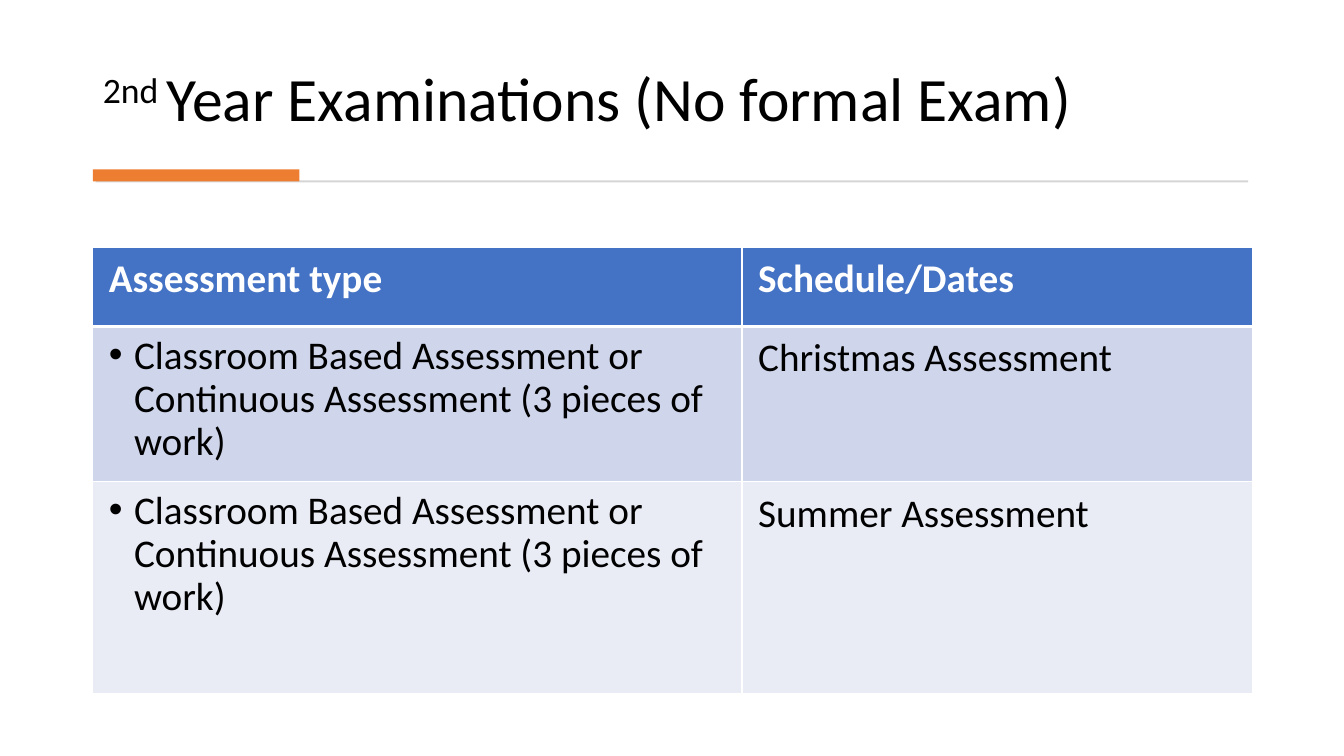
from dataclasses import dataclass

from lxml.etree import SubElement
from pptx import Presentation
from pptx.dml.color import RGBColor as Rgb
from pptx.enum.shapes import MSO_SHAPE as Shape
from pptx.enum.text import MSO_ANCHOR as Anchor, MSO_AUTO_SIZE as Fit, PP_ALIGN as Align
from pptx.oxml.ns import qn
from pptx.slide import Slide
from pptx.table import _Cell as Cell
from pptx.text.text import _Paragraph as Para
from pptx.util import Pt

SCALE = 9144


@dataclass(frozen=True)
class Theme:
    font: str = "Calibri"
    title: int = 44
    body: int = 28
    ink: str = "000000"
    white: str = "FFFFFF"
    rule: str = "D5D5D5"
    accent: str = "ED7D31"
    head: str = "4472C4"
    dark: str = "CFD5EA"
    light: str = "E9EBF5"


@dataclass(frozen=True)
class Box:
    left: int
    top: int
    width: int
    height: int

    def emu(self) -> list[int]:
        return [px(n) for n in (self.left, self.top, self.width, self.height)]


@dataclass(frozen=True)
class Bar:
    box: Box
    fill: str


@dataclass(frozen=True)
class Row:
    height: int
    fill: str
    texts: tuple[str, str]
    head: bool = False


LOOK = Theme()
TASK = "Classroom Based Assessment or Continuous Assessment (3 pieces of work)"
BARS = (
    Bar(Box(95, 179, 1143, 2), LOOK.rule),
    Bar(Box(92, 168, 205, 12), LOOK.accent),
)
COLS = (644, 506)
ROWS = (
    Row(79, LOOK.head, ("Assessment type", "Schedule/Dates"), True),
    Row(154, LOOK.dark, (TASK, "Christmas Assessment")),
    Row(210, LOOK.light, (TASK, "Summer Assessment")),
)


def px(size: int) -> int:
    return size * SCALE


def add_run(para: Para, text: str, size: int, color: str, bold: bool = False, raised: int = 0) -> None:
    run = para.add_run()
    run.text = text
    font = run.font
    font.name, font.size, font.bold = LOOK.font, Pt(size), bold
    font.color.rgb = Rgb.from_string(color)
    if raised:
        run._r.get_or_add_rPr().set("baseline", str(raised * 1000))


def add_title(slide: Slide) -> None:
    title = slide.shapes.title
    title.left, title.top, title.width, title.height = Box(92, 28, 1149, 111).emu()
    frame = title.text_frame
    frame.auto_size, frame.word_wrap = Fit.NONE, True
    frame.vertical_anchor = Anchor.BOTTOM
    para = frame.paragraphs[0]
    para.alignment, para.line_spacing = Align.LEFT, 0.9
    add_run(para, "2nd ", LOOK.title, LOOK.ink, raised=30)
    add_run(para, "Year Examinations (No formal Exam)", LOOK.title, LOOK.ink)


def add_bar(slide: Slide, bar: Bar) -> None:
    shape = slide.shapes.add_shape(Shape.RECTANGLE, *bar.box.emu())
    shape.shadow.inherit = False
    shape.fill.solid()
    shape.fill.fore_color.rgb = Rgb.from_string(bar.fill)
    shape.line.fill.background()


def add_edge(cell: Cell, side: str, width: int) -> None:
    line = SubElement(cell._tc.get_or_add_tcPr(), qn(f"a:ln{side}"), w=str(Pt(width)))
    fill = SubElement(line, qn("a:solidFill"))
    SubElement(fill, qn("a:srgbClr"), val=LOOK.white)


def add_bullet(para: Para) -> None:
    props = para._p.get_or_add_pPr()
    props.set("marL", str(px(25)))
    props.set("indent", str(px(-25)))
    SubElement(props, qn("a:buFont"), typeface="Arial")
    SubElement(props, qn("a:buChar"), char="•")
    para.line_spacing = 0.9


def fill_cell(cell: Cell, row: Row, text: str, under: bool) -> None:
    edges = {"L": 1, "R": 1, "T": 3 if under else 1, "B": 3 if row.head else 1}
    for side, width in edges.items():
        add_edge(cell, side, width)
    cell.fill.solid()
    cell.fill.fore_color.rgb = Rgb.from_string(row.fill)
    cell.margin_left = cell.margin_right = px(16)
    cell.margin_top = cell.margin_bottom = px(8)
    para = cell.text_frame.paragraphs[0]
    if text == TASK:
        add_bullet(para)
    add_run(para, text, LOOK.body, LOOK.white if row.head else LOOK.ink, row.head)


def add_grid(slide: Slide) -> None:
    box = Box(92, 245, sum(COLS), sum(row.height for row in ROWS))
    table = slide.shapes.add_table(len(ROWS), len(COLS), *box.emu()).table
    for col, width in zip(table.columns, COLS):
        col.width = px(width)
    for r, row in enumerate(ROWS):
        table.rows[r].height = px(row.height)
        under = r > 0 and ROWS[r - 1].head
        for c, text in enumerate(row.texts):
            fill_cell(table.cell(r, c), row, text, under)


def main() -> None:
    deck = Presentation()
    deck.slide_width, deck.slide_height = px(1333), px(750)
    slide = deck.slides.add_slide(deck.slide_layouts[5])
    add_title(slide)
    for bar in BARS:
        add_bar(slide, bar)
    add_grid(slide)
    deck.save("out.pptx")


if __name__ == "__main__":
    main()
